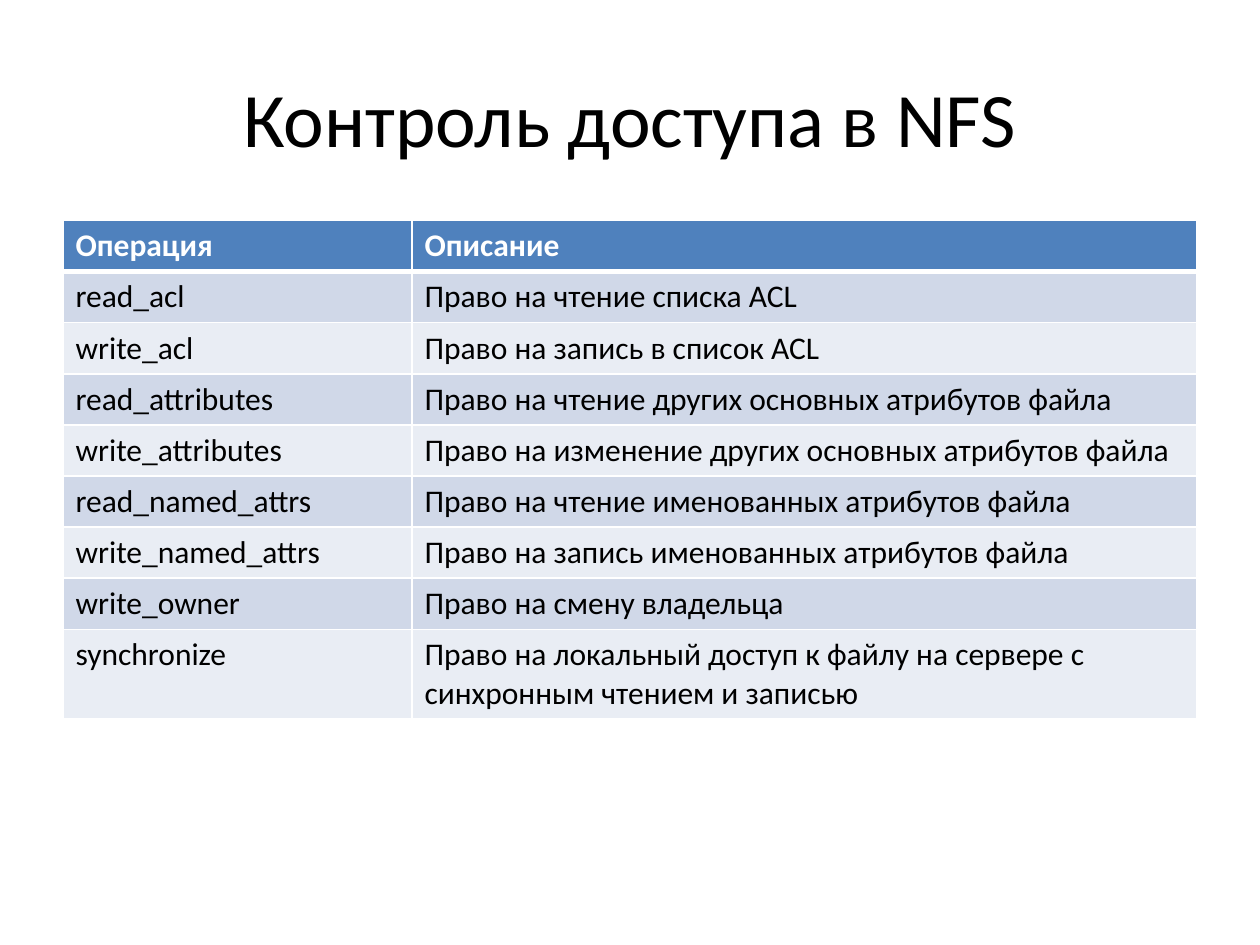
from dataclasses import dataclass
from typing import Any

from lxml.etree import SubElement
from pptx import Presentation
from pptx.dml.color import RGBColor
from pptx.enum.text import MSO_ANCHOR, PP_ALIGN
from pptx.oxml.ns import qn
from pptx.util import Inches, Pt

WHITE = RGBColor(0xFF, 0xFF, 0xFF)
BLACK = RGBColor(0x00, 0x00, 0x00)
HEADER_BLUE = RGBColor(0x4F, 0x81, 0xBD)
BAND_DARK = RGBColor(0xD0, 0xD8, 0xE8)
BAND_LIGHT = RGBColor(0xE9, 0xED, 0xF4)

WIDTH, HEIGHT = Inches(10), Inches(7.5)
MARGIN = 0.05
CONTENT = 1 - 2 * MARGIN

OPERATIONS = [
    ("Операция", "Описание"),
    ("read_acl", "Право на чтение списка ACL"),
    ("write_acl", "Право на запись в список ACL"),
    ("read_attributes", "Право на чтение других основных атрибутов файла"),
    ("write_attributes", "Право на изменение других основных атрибутов файла"),
    ("read_named_attrs", "Право на чтение именованных атрибутов файла"),
    ("write_named_attrs", "Право на запись именованных атрибутов файла"),
    ("write_owner", "Право на смену владельца"),
    ("synchronize", "Право на локальный доступ к файлу на сервере с синхронным чтением и записью"),
]


@dataclass
class SlideBuilder:
    page: Any
    font: str = "Calibri"
    title_size: int = 44
    table_size: int = 18

    def place(self, left, top, width, height):
        return int(left * WIDTH), int(top * HEIGHT), int(width * WIDTH), int(height * HEIGHT)

    def format_text(self, frame, size, color, bold=False):
        for paragraph in frame.paragraphs:
            for span in paragraph.runs:
                span.font.name = self.font
                span.font.size = Pt(size)
                span.font.bold = bold
                span.font.color.rgb = color

    def title(self, text, *area):
        box = self.page.shapes.title
        box.left, box.top, box.width, box.height = self.place(*area)
        frame = box.text_frame
        frame.text = text
        frame.vertical_anchor = MSO_ANCHOR.MIDDLE
        frame.paragraphs[0].alignment = PP_ALIGN.CENTER
        self.format_text(frame, self.title_size, BLACK)

    def borders(self, cell, widths):
        properties = cell._tc.get_or_add_tcPr()
        for side, width in widths.items():
            line = SubElement(properties, qn(f"a:ln{side}"), w=str(Pt(width)))
            fill = SubElement(line, qn("a:solidFill"))
            SubElement(fill, qn("a:srgbClr"), val=str(WHITE))

    def table(self, records, column_shares, row_heights, left, top):
        area = self.place(left, top, sum(column_shares), sum(row_heights))
        table = self.page.shapes.add_table(len(records), len(column_shares), *area).table
        for column, share in zip(table.columns, column_shares):
            column.width = int(share * WIDTH)
        for row, share in zip(table.rows, row_heights):
            row.height = int(share * HEIGHT)
        for index, record in enumerate(records):
            header = index == 0
            background = HEADER_BLUE if header else (BAND_LIGHT, BAND_DARK)[index % 2]
            widths = {"L": 1, "R": 1, "T": 3 if index == 1 else 1, "B": 3 if header else 1}
            for cell, text in zip(table.rows[index].cells, record):
                cell.text_frame.text = text
                self.format_text(cell.text_frame, self.table_size, WHITE if header else BLACK, header)
                self.borders(cell, widths)
                cell.fill.solid()
                cell.fill.fore_color.rgb = background


def main():
    deck = Presentation()
    deck.slide_width, deck.slide_height = WIDTH, HEIGHT
    builder = SlideBuilder(deck.slides.add_slide(deck.slide_layouts[5]))
    builder.title("Контроль доступа в NFS", MARGIN, 0.04, CONTENT, 1 / 6)

    operation_share = 0.277
    row_share = 0.405 / 7.5
    row_heights = [row_share] * (len(OPERATIONS) - 1) + [0.7 / 7.5]
    builder.table(OPERATIONS, [operation_share, CONTENT - operation_share], row_heights, MARGIN, 1.75 / 7.5)
    deck.save("out.pptx")


if __name__ == "__main__":
    main()
